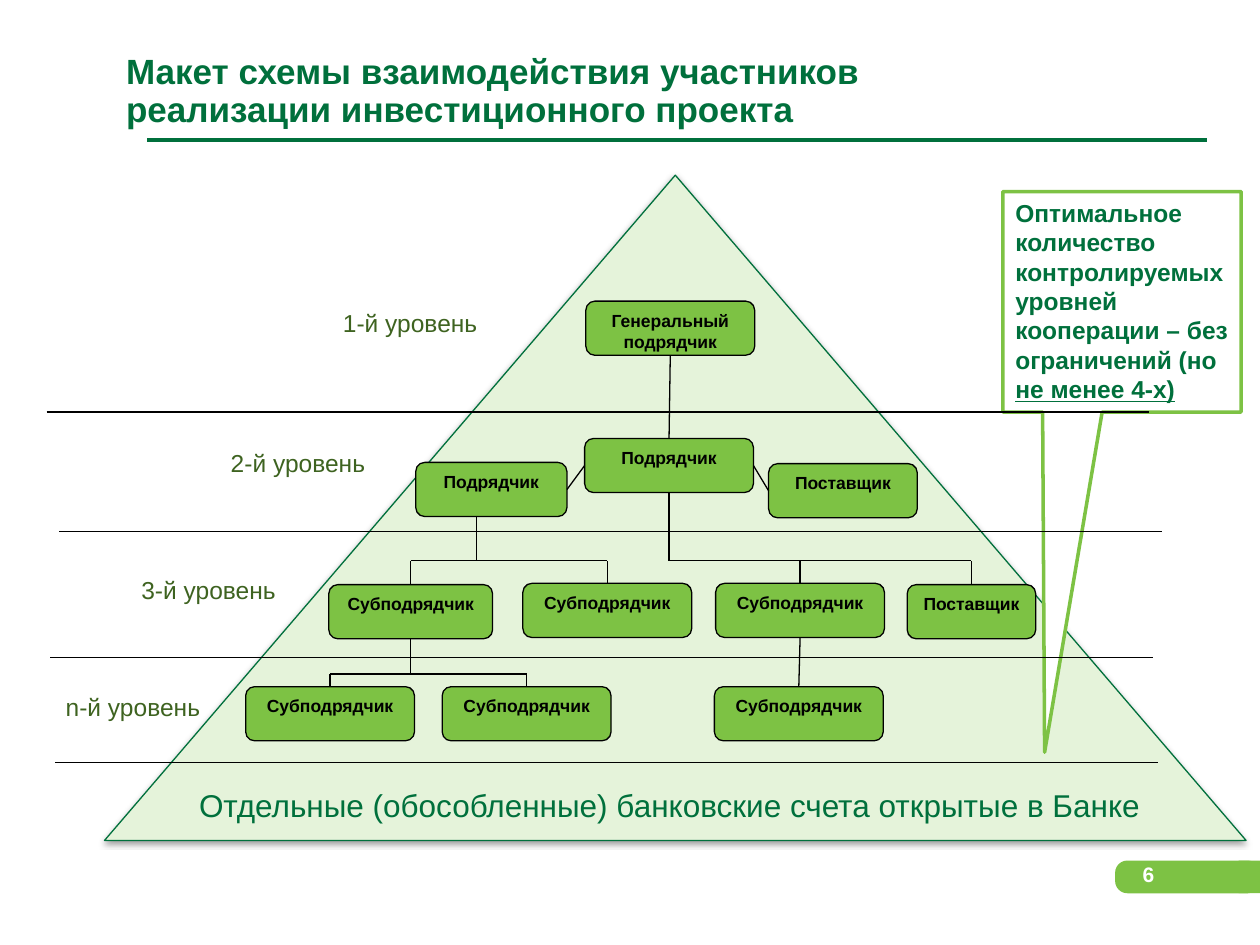
from dataclasses import dataclass

from lxml import etree
from pptx import Presentation
from pptx.dml.color import RGBColor
from pptx.enum.shapes import MSO_CONNECTOR, MSO_SHAPE
from pptx.enum.text import MSO_ANCHOR, MSO_AUTO_SIZE, PP_ALIGN
from pptx.oxml import parse_xml
from pptx.oxml.ns import nsdecls, qn
from pptx.util import Inches, Pt

LINE = MSO_CONNECTOR.STRAIGHT
ROUND, RECT = MSO_SHAPE.ROUNDED_RECTANGLE, MSO_SHAPE.RECTANGLE
PEAK, CALL = MSO_SHAPE.FLOWCHART_EXTRACT, MSO_SHAPE.RECTANGULAR_CALLOUT
LEFT, CENTER = PP_ALIGN.LEFT, PP_ALIGN.CENTER
HIGH, MIDDLE = MSO_ANCHOR.TOP, MSO_ANCHOR.MIDDLE
FIXED = MSO_AUTO_SIZE.NONE
TOP, WEST, BASE, EAST = range(4)

WIDE, TALL = Inches(10), Inches(7.5)
COLS, ROWS = 100, 75


@dataclass(frozen=True)
class Theme:
    font: str = "Arial"
    dark: str = "00703C"
    green: str = "7DC244"
    pale: str = "E5F3DA"
    olive: str = "3E6320"
    black: str = "000000"
    white: str = "FFFFFF"
    title: int = 20
    foot: int = 18
    note: int = 14
    page: int = 12
    box: int = 10
    thin: float = 0.75
    mid: float = 2
    thick: float = 2.25


THEME = Theme()

NODES = {
    "head": ("Генеральный подрядчик", 46.5, 23.9, 13.4),
    "lead": ("Подрядчик", 46.4, 34.8, 13.4),
    "left": ("Подрядчик", 33, 36.7, 12),
    "right": ("Поставщик", 61, 36.8, 11.8),
    "sub1": ("Субподрядчик", 26.1, 46.4, 13),
    "sub2": ("Субподрядчик", 41.5, 46.3, 13.4),
    "sub3": ("Субподрядчик", 56.8, 46.3, 13.4),
    "sub4": ("Поставщик", 72, 46.4, 10.2),
    "leaf1": ("Субподрядчик", 19.5, 54.5, 13.4),
    "leaf2": ("Субподрядчик", 35.1, 54.5, 13.4),
    "leaf3": ("Субподрядчик", 56.7, 54.5, 13.4),
}
NODE_ROWS = 4.3

PAIRS = [
    ("head", BASE, "lead", TOP),
    ("lead", EAST, "right", WEST),
    ("left", EAST, "lead", WEST),
    ("sub3", BASE, "leaf3", TOP),
]
HUB, FORK = 44.5, 53.5
STUBS = [
    ("lead", BASE, HUB), ("sub1", BASE, FORK),
    ("sub1", TOP, HUB), ("sub2", TOP, HUB),
    ("sub3", TOP, HUB), ("sub4", TOP, HUB),
    ("leaf1", TOP, FORK), ("leaf2", TOP, FORK),
]
RAILS = [("sub1", "sub2", HUB), ("lead", "sub4", HUB), ("leaf1", "leaf2", FORK)]

LABELS = [
    ("1-й уровень", 26, 23.7),
    ("2-й уровень", 17.1, 34.8),
    ("3-й уровень", 10, 44.9),
    ("n-й уровень", 4, 54.2),
]
BOUNDS = [(3.7, 32.7), (4.7, 42.2), (4, 52.2), (4.4, 60.5)]
SPAN = 87.5


def col(n):
    return round(WIDE * n / COLS)


def row(n):
    return round(TALL * n / ROWS)


def area(x, y, w, h):
    return col(x), row(y), col(w), row(h)


def tint(name):
    return RGBColor.from_string(name)


def write(frame, text, size, color, bold=False, align=LEFT, anchor=HIGH,
          space=None, tail=""):
    frame.word_wrap = True
    frame.auto_size = FIXED
    frame.vertical_anchor = anchor
    para = frame.paragraphs[0]
    para.alignment = align
    if space:
        para.line_spacing = space
    for part, under in ((text, False), (tail, True)):
        if part:
            run = para.add_run()
            run.text = part
            font = run.font
            font.name, font.size, font.bold = THEME.font, Pt(size), bold
            font.color.rgb = tint(color)
            if under:
                font.underline = True


def block(slide, kind, place, fill=None, edge=None, width=THEME.thin):
    shape = slide.shapes.add_shape(kind, *area(*place))
    shape.shadow.inherit = False
    if fill:
        shape.fill.solid()
        shape.fill.fore_color.rgb = tint(fill)
    else:
        shape.fill.background()
    if edge:
        shape.line.color.rgb = tint(edge)
        shape.line.width = Pt(width)
    else:
        shape.line.fill.background()
    return shape


def label(slide, place, text, **style):
    box = slide.shapes.add_textbox(*area(*place))
    write(box.text_frame, text, **style)


def line(slide, start, end, color=THEME.black, width=THEME.thin):
    rule = slide.shapes.add_connector(
        LINE, col(start[0]), row(start[1]), col(end[0]), row(end[1]))
    rule.line.color.rgb = tint(color)
    rule.line.width = Pt(width)
    etree.SubElement(rule._element.spPr, qn("a:effectLst"))
    return rule


def shade(shape):
    glow = shape._element.spPr.find(qn("a:effectLst"))
    glow.append(parse_xml(
        f'<a:outerShdw {nsdecls("a")} blurRad="{Pt(3.1)}" dist="{Pt(1.6)}" '
        f'dir="5400000" rotWithShape="0"><a:srgbClr val="{THEME.black}">'
        '<a:alpha val="38000"/></a:srgbClr></a:outerShdw>'))


def frame(slide):
    title = slide.shapes.title
    title.left, title.top, title.width, title.height = area(9, 3.9, 66.2, 6.8)
    write(title.text_frame,
          "Макет схемы взаимодействия участников реализации инвестиционного проекта",
          THEME.title, THEME.dark, bold=True, anchor=MIDDLE, space=0.9)
    line(slide, (11.7, 11.1), (95.8, 11.1), THEME.dark, THEME.thick)
    tab = block(slide, ROUND, (88.5, 68.3, 11.5, 2.6), THEME.green)
    tab.adjustments[0] = 0.375
    block(slide, RECT, (98.3, 68.3, 1.7, 2.6), THEME.green)
    label(slide, (89.7, 68.1, 7, 2.5), "6", size=THEME.page,
          color=THEME.white, bold=True, anchor=MIDDLE)


def peak(slide):
    shade(block(slide, PEAK, (8.3, 13.9, 90.6, 52.8), THEME.pale, THEME.dark))
    label(slide, (13.8, 61.9, 78.7, 4),
          "Отдельные (обособленные) банковские счета открытые в Банке",
          size=THEME.foot, color=THEME.dark, align=CENTER)
    note = block(slide, CALL, (79.6, 15.2, 18.9, 17.5),
                 THEME.white, THEME.green, THEME.mid)
    note.adjustments[0], note.adjustments[1] = -0.325, 2.043
    note.text_frame.margin_right = col(0.5)
    write(note.text_frame,
          "Оптимальное количество контролируемых уровней кооперации – без ограничений (но ",
          THEME.note, THEME.dark, bold=True, tail="не менее 4-х)")


def chart(slide):
    boxes, mids = {}, {}
    for name, (text, x, y, w) in NODES.items():
        box = block(slide, ROUND, (x, y, w, NODE_ROWS), THEME.green, THEME.black)
        write(box.text_frame, text, THEME.box, THEME.black, bold=True, align=CENTER)
        boxes[name], mids[name] = box, x + w / 2
    for first, side, last, face in PAIRS:
        link = line(slide, (0, 0), (1, 1))
        link.begin_connect(boxes[first], side)
        link.end_connect(boxes[last], face)
    for name, side, level in STUBS:
        stub = line(slide, (mids[name], level - 1), (mids[name], level))
        stub.begin_connect(boxes[name], side)
    for first, last, level in RAILS:
        line(slide, (mids[first], level), (mids[last], level))
    line(slide, (37.8, 41), (37.8, HUB))


def levels(slide):
    for text, x, y in LABELS:
        tag = block(slide, ROUND, (x, y, 14.8, 4.7))
        write(tag.text_frame, text, THEME.note, THEME.olive)
    for x, y in BOUNDS:
        line(slide, (x, y), (x + SPAN, y))


def main():
    deck = Presentation()
    deck.slide_width, deck.slide_height = WIDE, TALL
    slide = deck.slides.add_slide(deck.slide_layouts[5])
    for draw in (frame, peak, chart, levels):
        draw(slide)
    deck.save("out.pptx")


if __name__ == "__main__":
    main()
